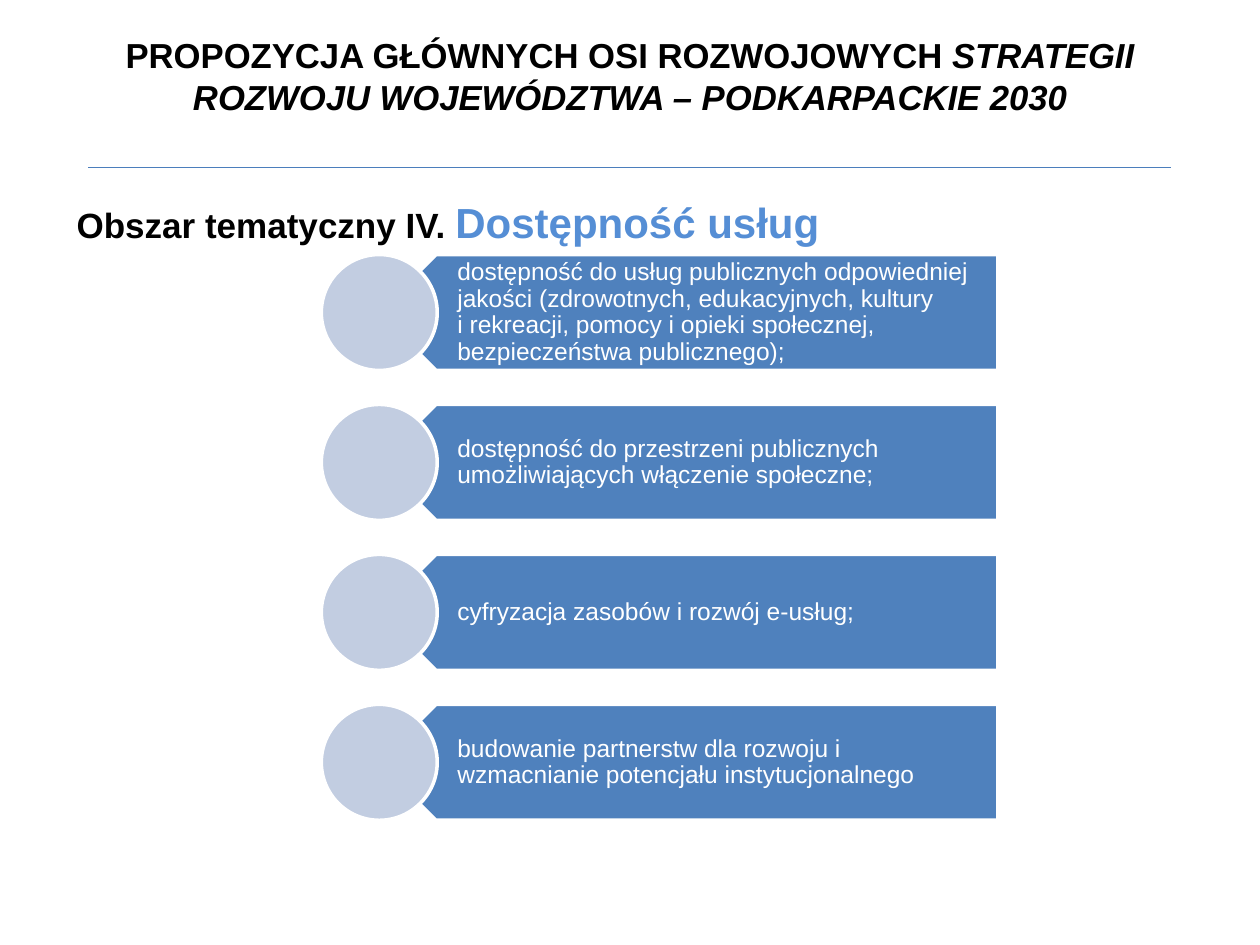
from lxml import etree
from pptx import Presentation
from pptx import util as u
from pptx.dml.color import RGBColor
from pptx.enum import shapes, text
from pptx.oxml.ns import qn

BLACK = RGBColor(0x00, 0x00, 0x00)
WHITE = RGBColor(0xFF, 0xFF, 0xFF)
BLUE = RGBColor(0x4F, 0x81, 0xBD)
PALE = RGBColor(0xC2, 0xCD, 0xE1)
SKY = RGBColor(0x55, 0x8E, 0xD5)
RULE = RGBColor(0x4B, 0x7E, 0xBC)
KIND = shapes.MSO_SHAPE
LEFT, MID = text.PP_ALIGN.LEFT, text.PP_ALIGN.CENTER


class Page:
    """Holds the style and the current slide."""

    def __init__(self, slide, face="Arial"):
        self.slide = slide
        self.face = face

    def words(self, at, runs, frame=None, para=None):
        """Add a text box; runs are (text, size, colour, bold, italic)."""
        box = self.slide.shapes.add_textbox(*map(u.Inches, at)).text_frame
        box.word_wrap = True
        for name, value in (frame or {}).items():
            setattr(box, name, value)
        line = box.paragraphs[0]
        for name, value in (para or {}).items():
            setattr(line, name, value)
        for words, size, color, bold, slant in runs:
            look = dict(name=self.face, size=u.Pt(size), bold=bold, italic=slant)
            for part, piece in enumerate(words.split("\n")):
                if part:
                    line.add_line_break()
                run = line.add_run()
                run.text = piece
                for name, value in look.items():
                    setattr(run.font, name, value)
                run.font.color.rgb = color

    def shape(self, kind, at, fill, turn=0):
        """Add a filled shape with a white edge."""
        item = self.slide.shapes.add_shape(kind, *map(u.Inches, at))
        item.shadow.inherit = False
        item.rotation = turn
        item.fill.solid()
        item.fill.fore_color.rgb = fill
        item.line.color.rgb = WHITE
        item.line.width = u.Pt(2)

    def rule(self, start, end, color):
        """Add a thin straight line."""
        ends = map(u.Inches, (*start, *end))
        line = self.slide.shapes.add_connector(shapes.MSO_CONNECTOR.STRAIGHT, *ends)
        line.line.color.rgb = color
        line.line.width = u.Pt(0.75)
        etree.SubElement(line._element.spPr, qn("a:effectLst"))


AREAS = [
    "dostępność do usług publicznych odpowiedniej jakości (zdrowotnych, "
    "edukacyjnych, kultury \ni rekreacji, pomocy i opieki społecznej, "
    "bezpieczeństwa publicznego);",
    "dostępność do przestrzeni publicznych umożliwiających włączenie społeczne;",
    "cyfryzacja zasobów i rozwój e-usług;",
    "budowanie partnerstw dla rozwoju i wzmacnianie potencjału instytucjonalnego",
]
TOP, STEP, SIZE = 2.02, 1.19, 0.92


def main():
    deck = Presentation()
    deck.slide_width, deck.slide_height = u.Inches(10), u.Inches(7.5)
    page = Page(deck.slides.add_slide(deck.slide_layouts[6]))

    # Title and rule
    page.words(
        (0.5, 0.22, 9, 1),
        [("PROPOZYCJA GŁÓWNYCH OSI ROZWOJOWYCH ", 19.8, BLACK, True, False),
         ("STRATEGII ROZWOJU WOJEWÓDZTWA – PODKARPACKIE 2030",
          19.8, BLACK, True, True)],
        para=dict(alignment=MID))
    page.rule((0.7, 1.33), (9.29, 1.33), RULE)

    # Heading of the area
    page.words(
        (0.51, 1.31, 9, 0.82),
        [("Obszar tematyczny IV. ", 20, BLACK, True, False),
         ("Dostępność usług", 24, SKY, True, False)],
        para=dict(alignment=LEFT, line_spacing=1.5))

    # List of arrows with discs
    frame = dict(vertical_anchor=text.MSO_ANCHOR.MIDDLE,
                 margin_left=u.Inches(0.4), margin_right=u.Inches(0.11),
                 margin_top=u.Inches(0.06), margin_bottom=u.Inches(0.06))
    for row, area in enumerate(AREAS):
        top = TOP + row * STEP
        page.shape(KIND.PENTAGON, (3, top, 4.92, SIZE), BLUE, turn=180)
        page.words((3.23, top, 4.69, SIZE), [(area, 14, WHITE, False, False)],
                   frame, dict(alignment=LEFT, line_spacing=0.9))
        page.shape(KIND.OVAL, (2.55, top, SIZE, SIZE), PALE)

    deck.save("out.pptx")


if __name__ == "__main__":
    main()
